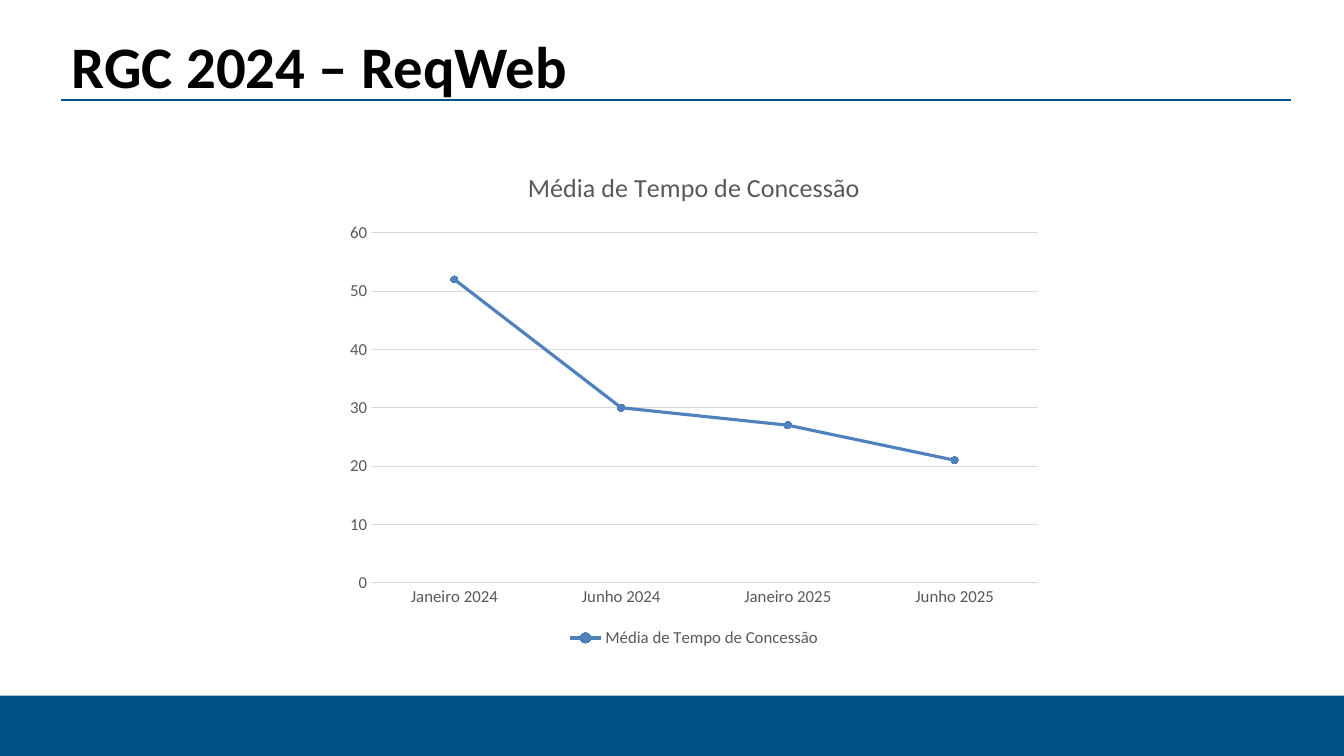
from lxml import etree
from pptx import Presentation
from pptx.chart.data import CategoryChartData
from pptx.dml.color import RGBColor
from pptx.enum.chart import XL_CHART_TYPE as ChartType, XL_LEGEND_POSITION as LegendPlace
from pptx.enum.chart import XL_MARKER_STYLE as MarkerStyle, XL_TICK_MARK as TickMark
from pptx.enum.shapes import MSO_CONNECTOR as Connector, MSO_SHAPE as Shape
from pptx.oxml.ns import qn
from pptx.util import Cm, Pt

# Content
TITLE = "RGC 2024 – ReqWeb"
MEASURE = "Média de Tempo de Concessão"
TIMES = {"Janeiro 2024": 52, "Junho 2024": 30, "Janeiro 2025": 27, "Junho 2025": 21}

# Format
BLUE, SERIES_BLUE, GREY, GRID = "005386", "4F81BD", "595959", "D9D9D9"
TITLE_FONT = {"name": "Calibri", "size": Pt(42), "bold": True}
CHART_TITLE_FONT = {"name": "Calibri", "size": Pt(18.6), "bold": False}
LABEL_FONT = {"name": "Calibri", "size": Pt(12), "bold": False}

# Layout in centimetres
WIDTH, HEIGHT = 33.87, 19.05
BAND_HEIGHT = 1.52
MARGIN, RULE_WIDTH, RULE_TOP = 1.53, 31.01, 2.52
TITLE_BOX = (MARGIN, 0.69, 22.38, 1.83)
CHART_BOX = (8.46, 3.76, 18.06, 12.67)


def color(code):
    return RGBColor.from_string(code)


def lengths(*values):
    return [Cm(value) for value in values]


def set_font(font, formats, code):
    for name, value in formats.items():
        setattr(font, name, value)
    font.color.rgb = color(code)


def set_line(line, code, width):
    line.color.rgb = color(code)
    line.width = Pt(width)


deck = Presentation()
deck.slide_width, deck.slide_height = lengths(WIDTH, HEIGHT)
page = deck.slides.add_slide(deck.slide_layouts[6])

# Bottom band
band = page.shapes.add_shape(
    Shape.RECTANGLE, *lengths(0, HEIGHT - BAND_HEIGHT, WIDTH, BAND_HEIGHT))
band.shadow.inherit = False
band.fill.solid()
band.fill.fore_color.rgb = color(BLUE)
band.line.fill.background()

# Rule under the title
rule = page.shapes.add_connector(
    Connector.STRAIGHT, *lengths(MARGIN, RULE_TOP, MARGIN + RULE_WIDTH, RULE_TOP))
set_line(rule.line, BLUE, 0.75)
etree.SubElement(rule._element.spPr, qn("a:effectLst"))

# Title
box = page.shapes.add_textbox(*lengths(*TITLE_BOX))
frame = box.text_frame
frame.word_wrap = True
frame.margin_left, frame.margin_top, frame.margin_right, frame.margin_bottom = lengths(
    0.28, 0.06, 0, 0)
span = frame.paragraphs[0].add_run()
span.text = TITLE
set_font(span.font, TITLE_FONT, "000000")

# Line chart
data = CategoryChartData()
data.categories = list(TIMES)
data.add_series(MEASURE, list(TIMES.values()))
chart = page.shapes.add_chart(
    ChartType.LINE_MARKERS, *lengths(*CHART_BOX), data).chart
set_font(chart.font, LABEL_FONT, GREY)

chart.has_title = True
heading = chart.chart_title.text_frame.paragraphs[0].add_run()
heading.text = MEASURE
set_font(heading.font, CHART_TITLE_FONT, GREY)

chart.has_legend = True
chart.legend.position = LegendPlace.BOTTOM
chart.legend.include_in_layout = False
set_font(chart.legend.font, LABEL_FONT, GREY)

# Axes
for axis in (chart.category_axis, chart.value_axis):
    axis.major_tick_mark = axis.minor_tick_mark = TickMark.NONE
    set_font(axis.tick_labels.font, LABEL_FONT, GREY)
set_line(chart.category_axis.format.line, GRID, 0.75)
values = chart.value_axis
values.minimum_scale, values.maximum_scale, values.major_unit = 0, 60, 10
values.format.line.fill.background()
values.has_major_gridlines = True
set_line(values.major_gridlines.format.line, GRID, 0.75)

# Series
plot = chart.plots[0]
plot.vary_by_categories = False
series = plot.series[0]
series.smooth = False
set_line(series.format.line, SERIES_BLUE, 2.25)
marker = series.marker
marker.style, marker.size = MarkerStyle.CIRCLE, 5
marker.format.fill.solid()
marker.format.fill.fore_color.rgb = color(SERIES_BLUE)
set_line(marker.format.line, SERIES_BLUE, 0.75)

deck.save("out.pptx")
